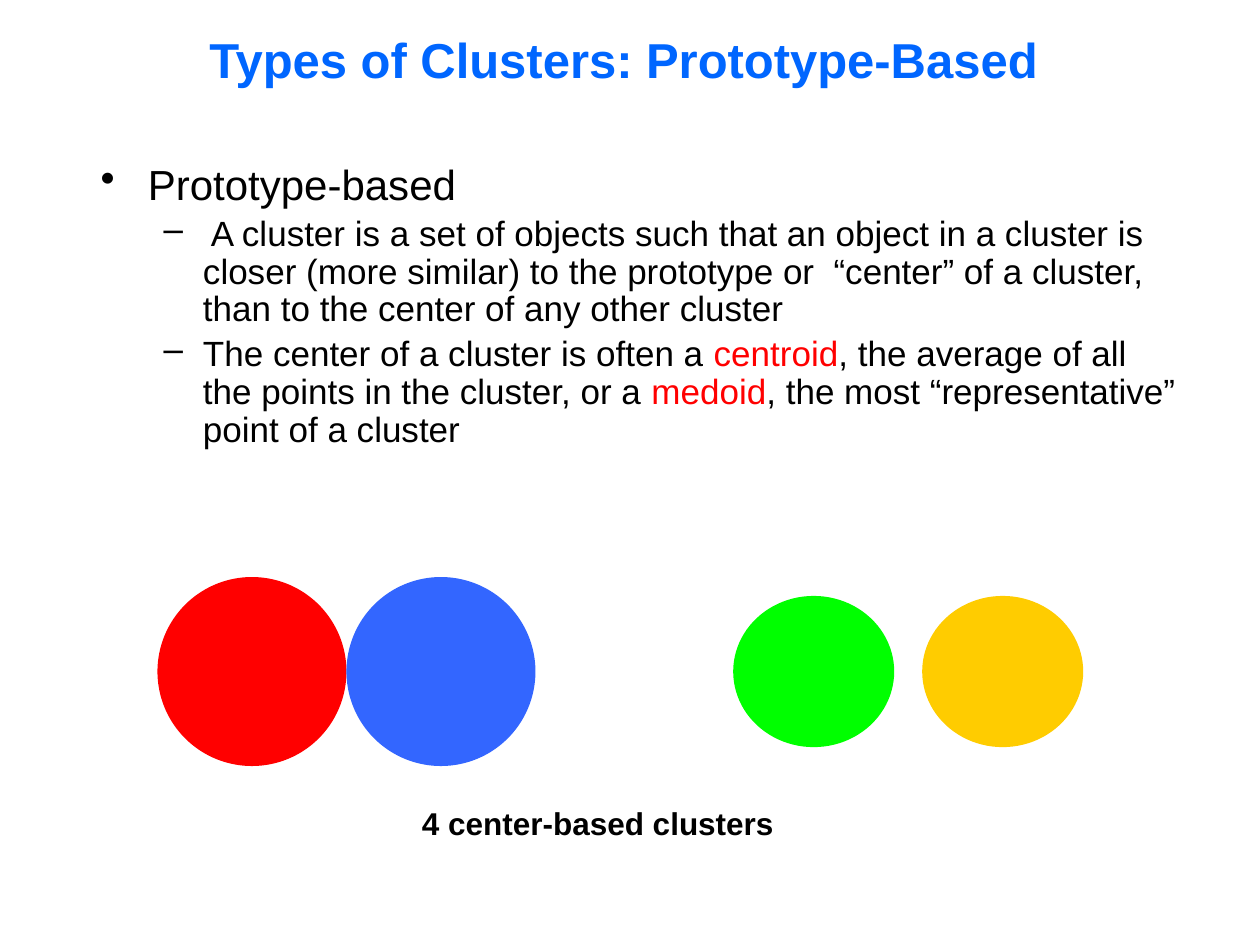
from dataclasses import dataclass

import lxml.etree
import pptx
import pptx.dml.color
import pptx.enum.shapes
import pptx.enum.text
import pptx.oxml.ns
import pptx.util

Pt = pptx.util.Pt
FONT = "Arial"
COLORS = {
    "title": "0066FF",
    "text": "000000",
    "red": "FF0000",
    "blue": "3366FF",
    "green": "00FF00",
    "yellow": "FFCC00",
}


@dataclass
class Bullet:
    mark: str
    level: int
    size: float
    left: float
    hanging: float
    runs: list[tuple[str, str]]


@dataclass
class Cluster:
    center_x: float
    width: float
    height: float
    color: str


CLUSTER_CENTER_Y = 383.76
CLUSTERS = [
    Cluster(144, 108, 108, "red"),
    Cluster(252, 108, 108, "blue"),
    Cluster(465, 92, 86.4, "green"),
    Cluster(573, 92, 86.4, "yellow"),
]
BULLETS = [
    Bullet("•", 0, 24, 27, 27, [("Prototype-based", "text")]),
    Bullet("–", 1, 20, 58.5, 22.5, [
        (" A cluster is a set of objects such that an object in a cluster is closer "
         "(more similar) to the prototype or  “center” of a cluster, than to the "
         "center of any other cluster", "text"),
    ]),
    Bullet("–", 1, 20, 58.5, 22.5, [
        ("The center of a cluster is often a ", "text"),
        ("centroid", "red"),
        (", the average of all the points in the cluster, or a ", "text"),
        ("medoid", "red"),
        (", the most “representative” point of a cluster", "text"),
    ]),
]


def rgb(name: str) -> pptx.dml.color.RGBColor:
    """Return the named colour."""
    return pptx.dml.color.RGBColor.from_string(COLORS[name])


def add_text_frame(slide, left: float, top: float, width: float, height: float):
    """Add a wrapping text box and return its text frame."""
    box = slide.shapes.add_textbox(Pt(left), Pt(top), Pt(width), Pt(height))
    box.text_frame.word_wrap = True
    return box.text_frame


def style_heading(paragraph, text: str, size: float, color: str) -> None:
    """Write a bold line of text."""
    paragraph.text = text
    paragraph.font.name = FONT
    paragraph.font.size = Pt(size)
    paragraph.font.bold = True
    paragraph.font.color.rgb = rgb(color)


def write_bullet(paragraph, bullet: Bullet) -> None:
    """Write one bulleted paragraph with coloured runs."""
    paragraph.level = bullet.level
    paragraph.line_spacing = 0.9
    paragraph.space_before = Pt(bullet.size * 0.2)
    paragraph.font.name = FONT
    paragraph.font.size = Pt(bullet.size)
    properties = paragraph._p.get_or_add_pPr()
    properties.set("marL", str(Pt(bullet.left)))
    properties.set("indent", str(-Pt(bullet.hanging)))
    mark = lxml.etree.Element(pptx.oxml.ns.qn("a:buChar"), char=bullet.mark)
    properties.find(pptx.oxml.ns.qn("a:defRPr")).addprevious(mark)
    for text, color in bullet.runs:
        run = paragraph.add_run()
        run.text = text
        run.font.color.rgb = rgb(color)


def add_cluster(slide, cluster: Cluster) -> None:
    """Draw a cluster as a plain ellipse on the shared centre line."""
    shape = slide.shapes.add_shape(
        pptx.enum.shapes.MSO_SHAPE.OVAL,
        Pt(cluster.center_x - cluster.width / 2),
        Pt(CLUSTER_CENTER_Y - cluster.height / 2),
        Pt(cluster.width),
        Pt(cluster.height),
    )
    shape.shadow.inherit = False
    shape.fill.solid()
    shape.fill.fore_color.rgb = rgb(cluster.color)
    shape.line.fill.background()


def main() -> None:
    """Build and save the slide."""
    presentation = pptx.Presentation()
    presentation.slide_width, presentation.slide_height = Pt(720), Pt(540)
    slide = presentation.slides.add_slide(presentation.slide_layouts[6])

    title = add_text_frame(slide, 30, 12, 652.5, 43.2)
    title.vertical_anchor = pptx.enum.text.MSO_ANCHOR.MIDDLE
    title.paragraphs[0].alignment = pptx.enum.text.PP_ALIGN.CENTER
    style_heading(title.paragraphs[0], "Types of Clusters: Prototype-Based", 28, "title")

    body = add_text_frame(slide, 50.4, 90, 630, 402.5)
    for index, bullet in enumerate(BULLETS):
        write_bullet(body.add_paragraph() if index else body.paragraphs[0], bullet)

    for cluster in CLUSTERS:
        add_cluster(slide, cluster)

    caption = add_text_frame(slide, 234, 456, 252, 28.8)
    style_heading(caption.paragraphs[0], "4 center-based clusters", 18, "text")

    presentation.save("out.pptx")


if __name__ == "__main__":
    main()
